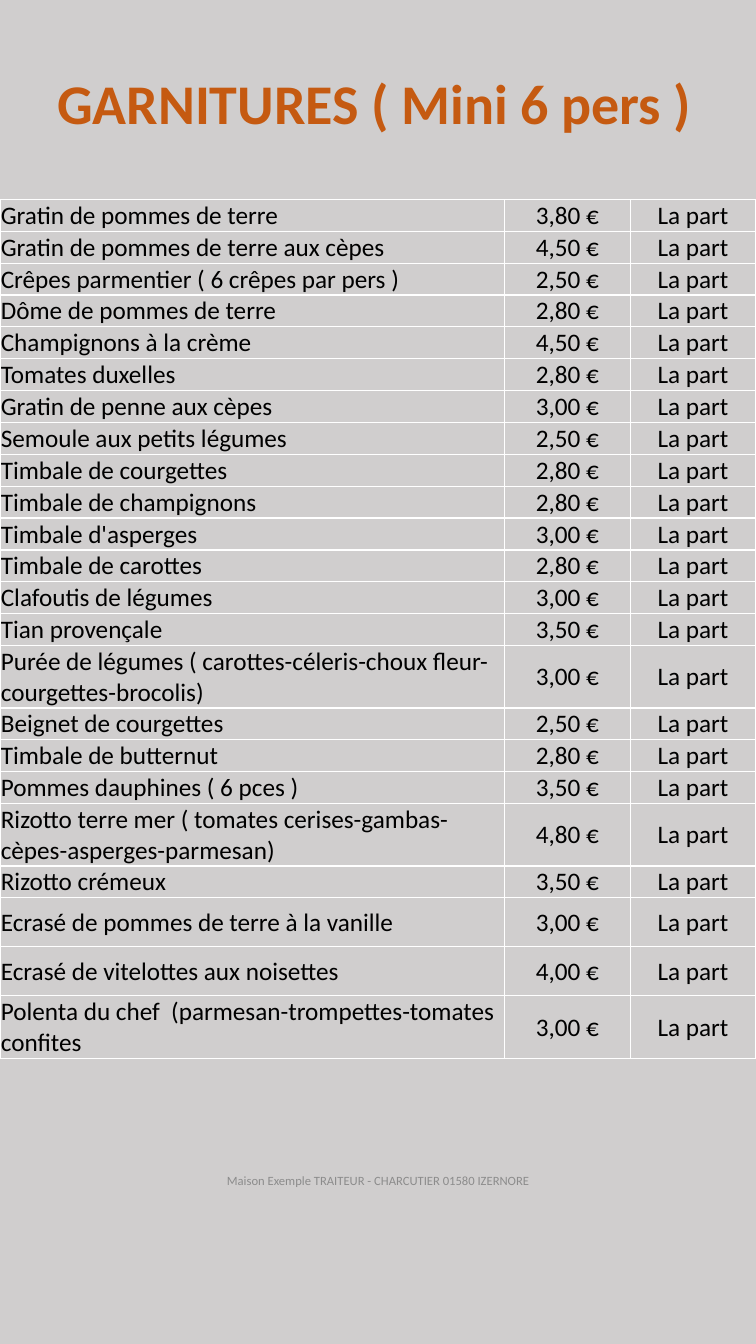
"""Build the price list slide for side dishes."""
from dataclasses import dataclass

from lxml.etree import SubElement
from pptx import Presentation
from pptx.dml.color import RGBColor
from pptx.enum.text import MSO_ANCHOR, MSO_AUTO_SIZE, PP_ALIGN
from pptx.oxml.ns import qn
from pptx.util import Pt

HEADING = "GARNITURES ( Mini 6 pers )"
CATERER = "Maison Exemple TRAITEUR - CHARCUTIER 01580 IZERNORE"
UNIT = "La part"
SINGLE, DOUBLE, TALL = 22.77, 44.6, 35
DISHES = [
    ("Gratin de pommes de terre", "3,80 €", SINGLE),
    ("Gratin de pommes de terre aux cèpes", "4,50 €", SINGLE),
    ("Crêpes parmentier ( 6 crêpes par pers )", "2,50 €", SINGLE),
    ("Dôme de pommes de terre", "2,80 €", SINGLE),
    ("Champignons à la crème", "4,50 €", SINGLE),
    ("Tomates duxelles", "2,80 €", SINGLE),
    ("Gratin de penne aux cèpes", "3,00 €", SINGLE),
    ("Semoule aux petits légumes", "2,50 €", SINGLE),
    ("Timbale de courgettes", "2,80 €", SINGLE),
    ("Timbale de champignons", "2,80 €", SINGLE),
    ("Timbale d'asperges", "3,00 €", SINGLE),
    ("Timbale de carottes", "2,80 €", SINGLE),
    ("Clafoutis de légumes", "3,00 €", SINGLE),
    ("Tian provençale", "3,50 €", SINGLE),
    ("Purée de légumes ( carottes-céleris-choux fleur-courgettes-brocolis)", "3,00 €", DOUBLE),
    ("Beignet de courgettes", "2,50 €", SINGLE),
    ("Timbale de butternut", "2,80 €", SINGLE),
    ("Pommes dauphines ( 6 pces )", "3,50 €", SINGLE),
    ("Rizotto terre mer ( tomates cerises-gambas-cèpes-asperges-parmesan)", "4,80 €", DOUBLE),
    ("Rizotto crémeux", "3,50 €", SINGLE),
    ("Ecrasé de pommes de terre à la vanille", "3,00 €", TALL),
    ("Ecrasé de vitelottes aux noisettes", "4,00 €", TALL),
    ("Polenta du chef  (parmesan-trompettes-tomates confites", "3,00 €", DOUBLE),
]
SLIDE_WIDTH, SLIDE_HEIGHT = 540, 960
MENU_TOP = 142.4
COLUMN_WIDTHS = (360.4, 89.8, 89.8)
CELL_INSET = 0.6


@dataclass(frozen=True)
class Theme:
    font: str = "Calibri"
    background: str = "D0CECE"
    heading: str = "C55A11"
    body: str = "000000"
    caterer: str = "8C8C8C"
    border: str = "FFFFFF"
    heading_size: int = 40
    body_size: int = 18
    caterer_size: int = 9
    border_width: int = 1


THEME = Theme()


def write(frame, words, size, color, align=PP_ALIGN.LEFT, bold=False):
    paragraph = frame.paragraphs[0]
    paragraph.alignment = align
    run = paragraph.add_run()
    run.text = words
    run.font.name = THEME.font
    run.font.size = Pt(size)
    run.font.bold = bold
    run.font.color.rgb = RGBColor.from_string(color)


def add_text(slide, box, anchor, wrap, *style):
    frame = slide.shapes.add_textbox(*map(Pt, box)).text_frame
    frame.word_wrap = wrap
    frame.auto_size = MSO_AUTO_SIZE.NONE if wrap else MSO_AUTO_SIZE.SHAPE_TO_FIT_TEXT
    frame.vertical_anchor = anchor
    write(frame, *style)


def style_cell(cell):
    cell.margin_left = cell.margin_right = cell.margin_top = Pt(CELL_INSET)
    cell.margin_bottom = 0
    cell.vertical_anchor = MSO_ANCHOR.MIDDLE
    properties = cell._tc.get_or_add_tcPr()
    for side in ("a:lnL", "a:lnR", "a:lnT", "a:lnB"):
        border = SubElement(properties, qn(side), w=str(Pt(THEME.border_width)))
        SubElement(SubElement(border, qn("a:solidFill")), qn("a:srgbClr"), val=THEME.border)
    cell.fill.solid()
    cell.fill.fore_color.rgb = RGBColor.from_string(THEME.background)


def add_menu(slide):
    height = sum(dish[2] for dish in DISHES)
    menu = slide.shapes.add_table(
        len(DISHES), len(COLUMN_WIDTHS), 0, Pt(MENU_TOP), Pt(SLIDE_WIDTH), Pt(height)
    ).table
    menu.first_row = menu.horz_banding = False
    for column, width in zip(menu.columns, COLUMN_WIDTHS):
        column.width = Pt(width)
    for row, (dish, price, row_height) in zip(menu.rows, DISHES):
        row.height = Pt(row_height)
        for index, (cell, words) in enumerate(zip(row.cells, (dish, price, UNIT))):
            style_cell(cell)
            align = PP_ALIGN.CENTER if index else PP_ALIGN.LEFT
            write(cell.text_frame, words, THEME.body_size, THEME.body, align)


def main():
    presentation = Presentation()
    presentation.slide_width, presentation.slide_height = Pt(SLIDE_WIDTH), Pt(SLIDE_HEIGHT)
    slide = presentation.slides.add_slide(presentation.slide_layouts[6])
    slide.background.fill.solid()
    slide.background.fill.fore_color.rgb = RGBColor.from_string(THEME.background)
    add_text(slide, (141, 818, 258, 51), MSO_ANCHOR.MIDDLE, True,
             CATERER, THEME.caterer_size, THEME.caterer, PP_ALIGN.CENTER)
    add_text(slide, (33.8, 45.4, 472.4, 55.4), MSO_ANCHOR.TOP, False,
             HEADING, THEME.heading_size, THEME.heading, PP_ALIGN.LEFT, True)
    add_menu(slide)
    presentation.save("out.pptx")


if __name__ == "__main__":
    main()
